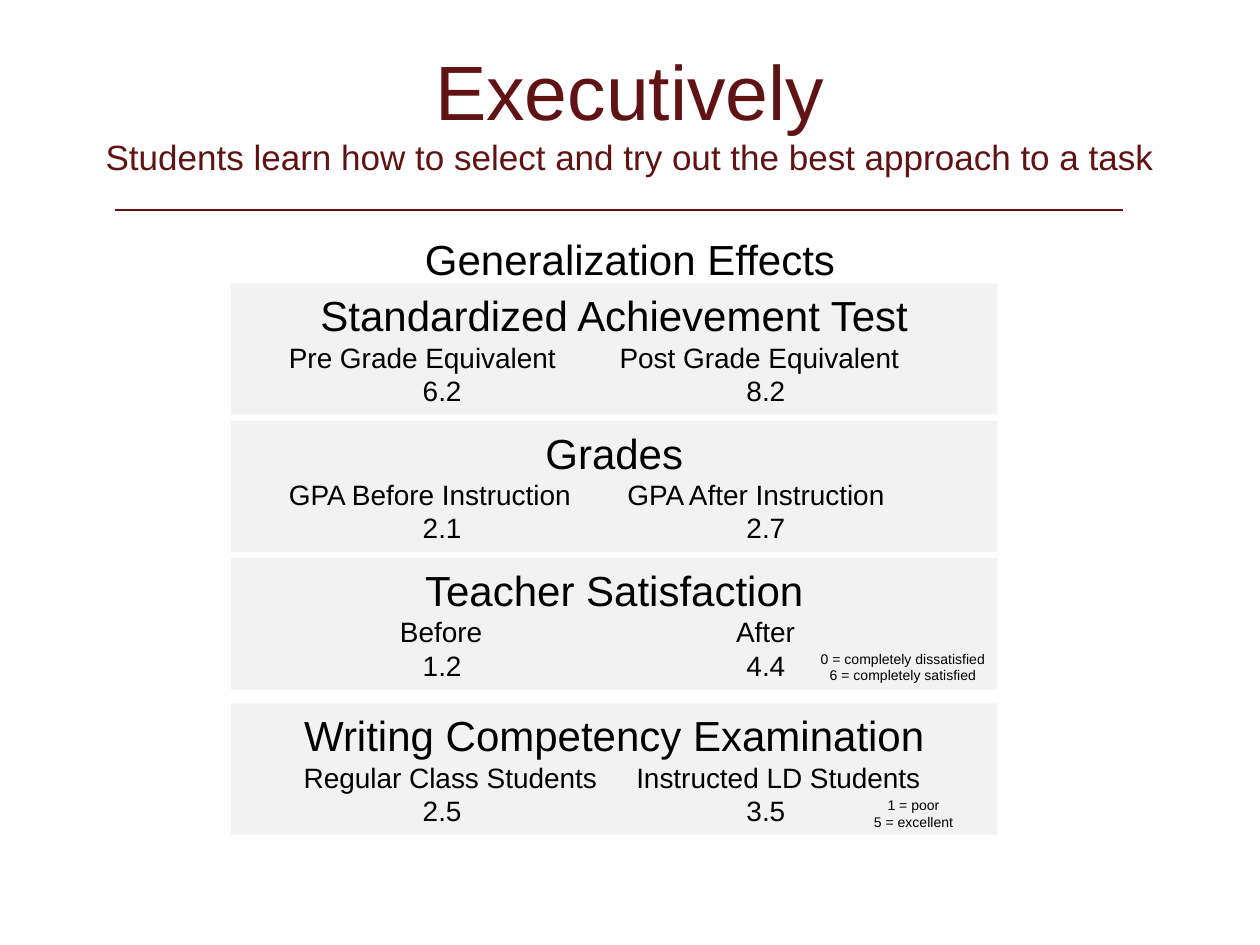
from pptx import Presentation
from pptx.dml.color import RGBColor
from pptx.enum.shapes import MSO_CONNECTOR, MSO_SHAPE
from pptx.enum.text import MSO_ANCHOR, PP_ALIGN
from pptx.oxml.ns import qn
from pptx.util import Pt
from lxml.etree import SubElement

MAROON = RGBColor(0x60, 0x13, 0x14)
BLACK = RGBColor(0, 0, 0)
PALE_GRAY = RGBColor(0xF2, 0xF2, 0xF2)
PANEL_LEFT, PANEL_WIDTH, PANEL_HEIGHT = 132, 438, 75
VALUE_STOPS = (102.5, 287.5)
PANELS = [
    (162, "Standardized Achievement Test",
     ("Pre Grade Equivalent", "Post Grade Equivalent"), (26, 215), ("6.2", "8.2")),
    (240.5, "Grades",
     ("GPA Before Instruction", "GPA After Instruction"), (26, 219.5), ("2.1", "2.7")),
    (319, "Teacher Satisfaction",
     ("Before", "After"), (89.5, 281.5), ("1.2", "4.4")),
    (402, "Writing Competency Examination",
     ("Regular Class Students", "Instructed LD Students"), (34.5, 224.5), ("2.5", "3.5")),
]
NOTES = [
    (450, 368, ("0 = completely dissatisfied", "6 = completely satisfied")),
    (456, 451.5, ("1 = poor", "5 = excellent")),
]


def write(frame, text, size, color=BLACK, align=PP_ALIGN.CENTER, stops=()):
    """Add one formatted paragraph, with left tab stops if any are given."""
    first = frame.paragraphs[0]
    para = frame.add_paragraph() if first.runs else first
    para.alignment = align
    if stops:
        tabs = SubElement(para._p.get_or_add_pPr(), qn("a:tabLst"))
        for stop in stops:
            SubElement(tabs, qn("a:tab"), pos=str(int(Pt(stop))), algn="l")
    span = para.add_run()
    span.text = text
    span.font.name = "Arial"
    span.font.size = Pt(size)
    span.font.color.rgb = color


def add_text_frame(page, left, top, width, height):
    """Add a wrapping text box and return its text frame."""
    box = page.shapes.add_textbox(Pt(left), Pt(top), Pt(width), Pt(height))
    box.text_frame.word_wrap = True
    return box.text_frame


def add_header(page, left, top, width, height):
    """Place the title and subtitle in the given box."""
    frame = add_text_frame(page, left, top, width, height)
    frame.vertical_anchor = MSO_ANCHOR.MIDDLE
    frame.margin_bottom = Pt(26.6)
    write(frame, "Executively", 44, MAROON)
    write(frame, "Students learn how to select and try out the best approach to a task",
          20, MAROON)


def add_rule(page, left, top, width):
    """Draw the horizontal rule below the header."""
    rule = page.shapes.add_connector(
        MSO_CONNECTOR.STRAIGHT, Pt(left), Pt(top), Pt(left + width), Pt(top))
    rule.line.color.rgb = MAROON
    rule.line.width = Pt(1.5)
    SubElement(rule._element.spPr, qn("a:effectLst"))


def add_panel(page, left, top, width, height, heading, labels, label_stops, values):
    """Place one gray panel with a heading and two labelled results."""
    panel = page.shapes.add_shape(
        MSO_SHAPE.RECTANGLE, Pt(left), Pt(top), Pt(width), Pt(height))
    panel.shadow.inherit = False
    panel.fill.solid()
    panel.fill.fore_color.rgb = PALE_GRAY
    panel.line.fill.background()
    frame = panel.text_frame
    frame.word_wrap = True
    frame.vertical_anchor = MSO_ANCHOR.TOP
    write(frame, heading, 24)
    for pair, stops in ((labels, label_stops), (values, VALUE_STOPS)):
        write(frame, "\t" + "\t".join(pair), 16, align=PP_ALIGN.LEFT, stops=stops)


def add_note(page, left, top, width, height, lines):
    """Place the small key to a rating scale."""
    frame = add_text_frame(page, left, top, width, height)
    for line in lines:
        write(frame, line, 8)


def main():
    """Build the slide and save the deck."""
    deck = Presentation()
    deck.slide_width, deck.slide_height = Pt(720), Pt(540)
    page = deck.slides.add_slide(deck.slide_layouts[6])
    add_rule(page, 66, 120, 576)
    add_header(page, 15, 29.5, 690, 90)
    write(add_text_frame(page, 54, 129.6, 612, 32), "Generalization Effects", 24)
    for top, *content in PANELS:
        add_panel(page, PANEL_LEFT, top, PANEL_WIDTH, PANEL_HEIGHT, *content)
    for left, top, lines in NOTES:
        add_note(page, left, top, 132, 26.5, lines)
    deck.save("out.pptx")


if __name__ == "__main__":
    main()
